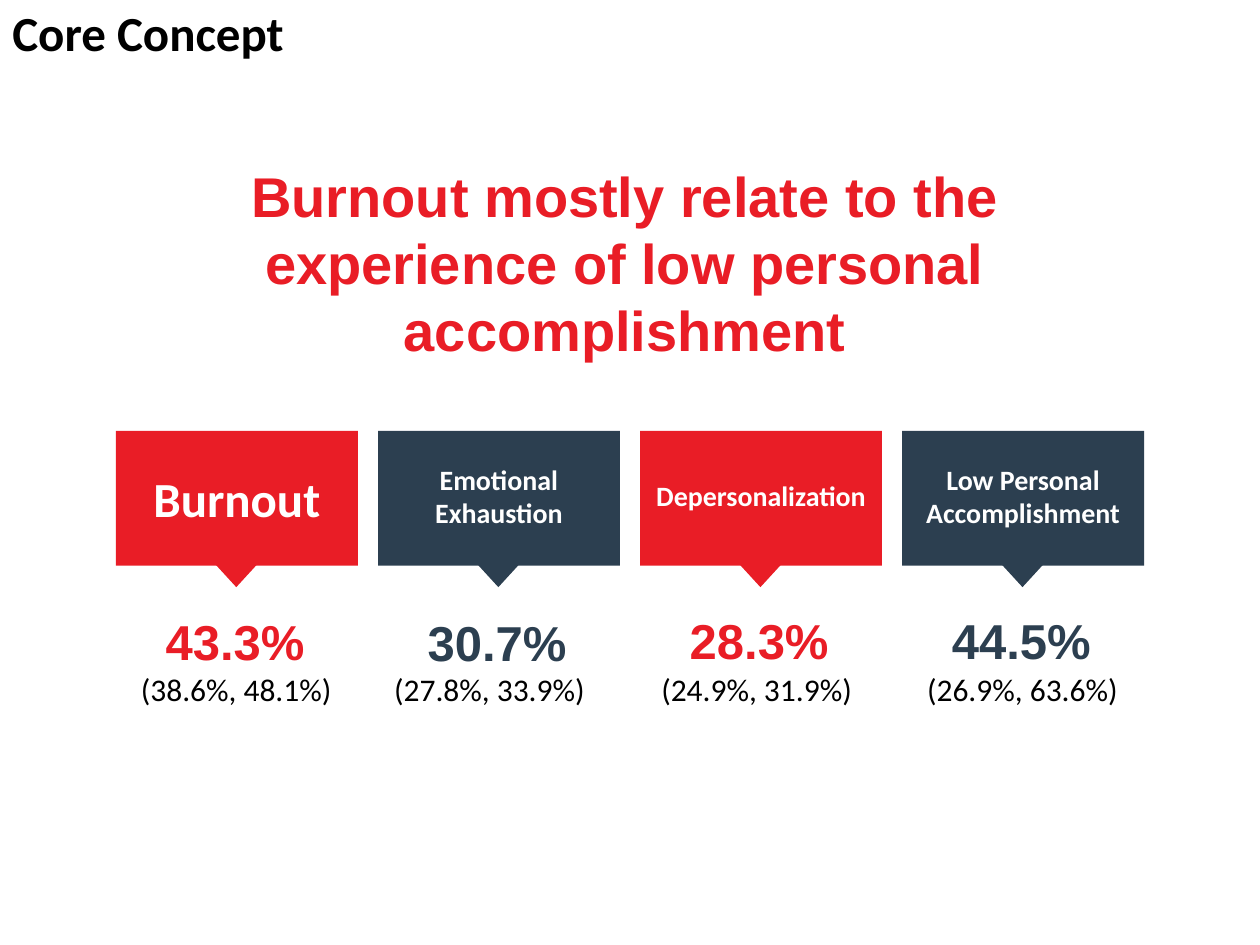
from pptx import Presentation
from pptx.dml.color import RGBColor
from pptx.enum import shapes, text
from pptx.util import Inches, Pt

HUES = {"red": "E91D26", "navy": "2C3F50", "white": "FFFFFF", "black": "000000"}
MID = text.PP_ALIGN.CENTER

deck = Presentation()
deck.slide_width, deck.slide_height = Inches(10), Inches(7.5)
slide = deck.slides.add_slide(deck.slide_layouts[5])


def write(box, words, size, hue, font="Calibri", bold=True, align=MID,
          anchor=text.MSO_ANCHOR.TOP, wrap=True):
    frame = box.text_frame
    frame.text = words
    frame.word_wrap = wrap
    frame.auto_size = text.MSO_AUTO_SIZE.NONE
    frame.vertical_anchor = anchor
    para = frame.paragraphs[0]
    para.alignment = align
    para.font.name, para.font.size, para.font.bold = font, Pt(size), bold
    para.font.color.rgb = RGBColor.from_string(HUES[hue])


def add_box(left, top, width, height):
    return slide.shapes.add_textbox(*map(Inches, (left, top, width, height)))


# Headline
title = slide.shapes.title
title.left, title.top = Inches(0.67), Inches(1.33)
title.width, title.height = Inches(8.58), Inches(1.5)
write(title, "Burnout mostly relate to the experience of low personal accomplishment",
      32, "red", "Arial", anchor=text.MSO_ANCHOR.MIDDLE)

# Section label
write(add_box(0, -0.03, 4, 0.57), "Core Concept", 28, "black",
      align=text.PP_ALIGN.LEFT)

# Cards: label, label size, label top and height, rate, rate top, range, range left
cards = [
    ("Burnout", 28, 3.67, 0.57, "43.3%", 4.8, "(38.6%, 48.1%)", 1.02),
    ("Emotional Exhaustion", 16, 3.62, 0.64, "30.7%", 4.81, "(27.8%, 33.9%)", 3.03),
    ("Depersonalization", 16, 3.75, 0.37, "28.3%", 4.79, "(24.9%, 31.9%)", 5.15),
    ("Low Personal Accomplishment", 16, 3.62, 0.64, "44.5%", 4.79, "(26.9%, 63.6%)", 7.26),
]
for i, (label, size, top, high, rate, y, span, x) in enumerate(cards):
    left = 0.92 + 2.08 * i
    hue = ("red", "navy")[i % 2]

    # Block with its pointer
    group = slide.shapes.add_group_shape()
    for kind, place in (
        (shapes.MSO_SHAPE.RECTANGLE, (left, 3.42, 1.92, 1.07)),
        (shapes.MSO_SHAPE.ISOSCELES_TRIANGLE, (left + 0.79, 4.48, 0.33, 0.18)),
    ):
        part = group.shapes.add_shape(kind, *map(Inches, place))
        part.shadow.inherit = False
        part.fill.solid()
        part.fill.fore_color.rgb = RGBColor.from_string(HUES[hue])
        part.line.fill.background()
    part.rotation = 180  # the pointer aims down

    # Label, rate and range; the long single word gets the full block width
    inset = 0 if label == "Depersonalization" else 0.08
    write(add_box(left + inset, top, 1.92 - 2 * inset, high), label, size, "white")
    write(add_box(left - 0.02, y, 1.93, 0.57), rate, 28, hue, "Arial",
          anchor=text.MSO_ANCHOR.MIDDLE)
    write(add_box(x, 5.27, 1.73, 0.4), span, 18, "black", bold=False,
          align=text.PP_ALIGN.LEFT, wrap=False)

deck.save("out.pptx")
